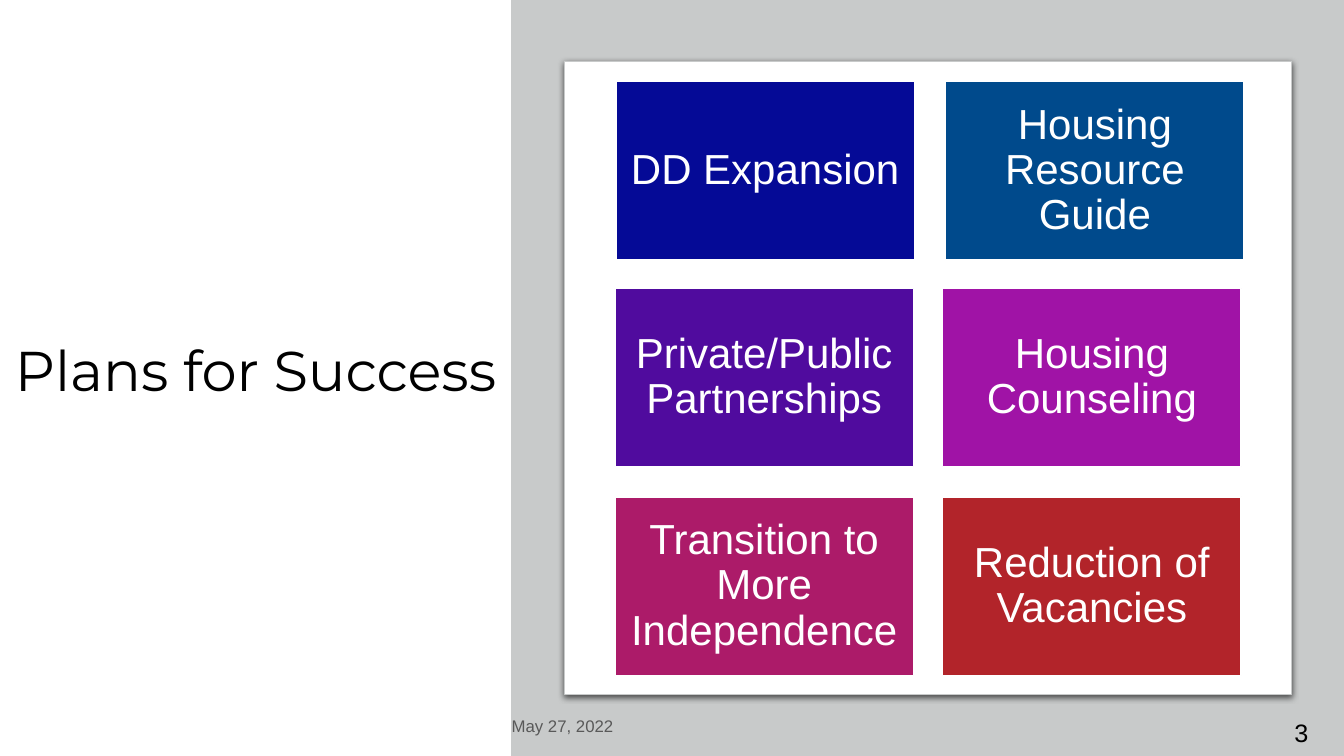
from lxml import etree
from pptx import Presentation
from pptx.dml.color import RGBColor
from pptx.enum.shapes import MSO_SHAPE
from pptx.enum.text import MSO_ANCHOR, PP_ALIGN
from pptx.oxml.ns import qn
from pptx.util import Inches, Pt

RECT = MSO_SHAPE.RECTANGLE
MIDDLE, TOP = MSO_ANCHOR.MIDDLE, MSO_ANCHOR.TOP
CENTER, LEFT = PP_ALIGN.CENTER, PP_ALIGN.LEFT

TITLE = "Plans for Success"
DATE = "May 27, 2022"
NUMBER = "3"
# Each row: top, left of each column, then (label, fill) per tile
ROWS = [
    (0.81, (6.11, 9.38), [("DD Expansion", "050A96"),
                          ("Housing Resource Guide", "004A8C")]),
    (2.86, (6.1, 9.35), [("Private/Public Partnerships", "500B9E"),
                         ("Housing Counseling", "A013A6")]),
    (4.93, (6.1, 9.35), [("Transition to More Independence", "AC1B69"),
                         ("Reduction of Vacancies", "B2242A")]),
]
TILE = (2.96, 1.77)

THEME = {
    "white": "FFFFFF", "black": "000000", "panel": "C8CACA", "muted": "595959",
    "head": "Montserrat", "body": "Arial",
    "title": 40, "tile": 30, "number": 18, "date": 12,
}


def rgb(name):
    return RGBColor.from_string(THEME.get(name, name))


def add_box(slide, at, fill, line=None, width=1):
    box = slide.shapes.add_shape(RECT, *map(Inches, at))
    box.shadow.inherit = False
    box.fill.solid()
    box.fill.fore_color.rgb = rgb(fill)
    if line:
        box.line.color.rgb = rgb(line)
        box.line.width = Pt(width)
    else:
        box.line.fill.background()
    return box


def add_shade(shape, blur, drop, alpha):
    """Give the shape a black shadow straight below it."""
    effects = shape._element.spPr.find(qn("a:effectLst"))
    shade = etree.SubElement(
        effects, qn("a:outerShdw"), blurRad=str(Pt(blur)), dist=str(Pt(drop)),
        dir="5400000", algn="ctr", rotWithShape="0")
    tint = etree.SubElement(shade, qn("a:srgbClr"), val=THEME["black"])
    etree.SubElement(tint, qn("a:alpha"), val=str(alpha * 1000))


def put_text(shape, text, size, color, font="body", align=CENTER,
             anchor=MIDDLE, inset=None, spacing=None, after=0):
    frame = shape.text_frame
    frame.word_wrap = True
    frame.vertical_anchor = anchor
    if inset is not None:
        frame.margin_left = frame.margin_right = Inches(inset)
        frame.margin_top = frame.margin_bottom = Inches(inset)
    para = frame.paragraphs[0]
    para.alignment = align
    para.space_after = Pt(after)
    if spacing:
        para.line_spacing = spacing
    run = para.add_run()
    run.text = text
    run.font.size = Pt(THEME[size])
    run.font.name = THEME[font]
    run.font.color.rgb = rgb(color)


def add_label(slide, at, text, size, color, **style):
    label = slide.shapes.add_textbox(*map(Inches, at))
    put_text(label, text, size, color, **style)


def main():
    deck = Presentation()
    deck.slide_width, deck.slide_height = Inches(13.33), Inches(7.5)
    slide = deck.slides.add_slide(deck.slide_layouts[6])

    add_label(slide, (-0.04, 0.69, 5.15, 6.02), TITLE, "title", "black",
              font="head", spacing=0.9)
    add_box(slide, (5.07, 0, 8.26, 7.5), "panel")
    card = add_box(slide, (5.6, 0.61, 7.21, 6.28), "white", "panel", 0.75)
    add_shade(card, 4.5, 1.5, 63)
    add_label(slide, (1.96, 7, 7.24, 0.4), DATE, "date", "muted", after=6)

    for top, lefts, tiles in ROWS:
        for left, (text, fill) in zip(lefts, tiles):
            tile = add_box(slide, (left, top, *TILE), fill, "white")
            put_text(tile, text, "tile", "white", inset=0.12, spacing=0.9)

    add_label(slide, (12.74, 7.07, 0.32, 0.4), NUMBER, "number", "black",
              align=LEFT, anchor=TOP)
    deck.save("out.pptx")


if __name__ == "__main__":
    main()
